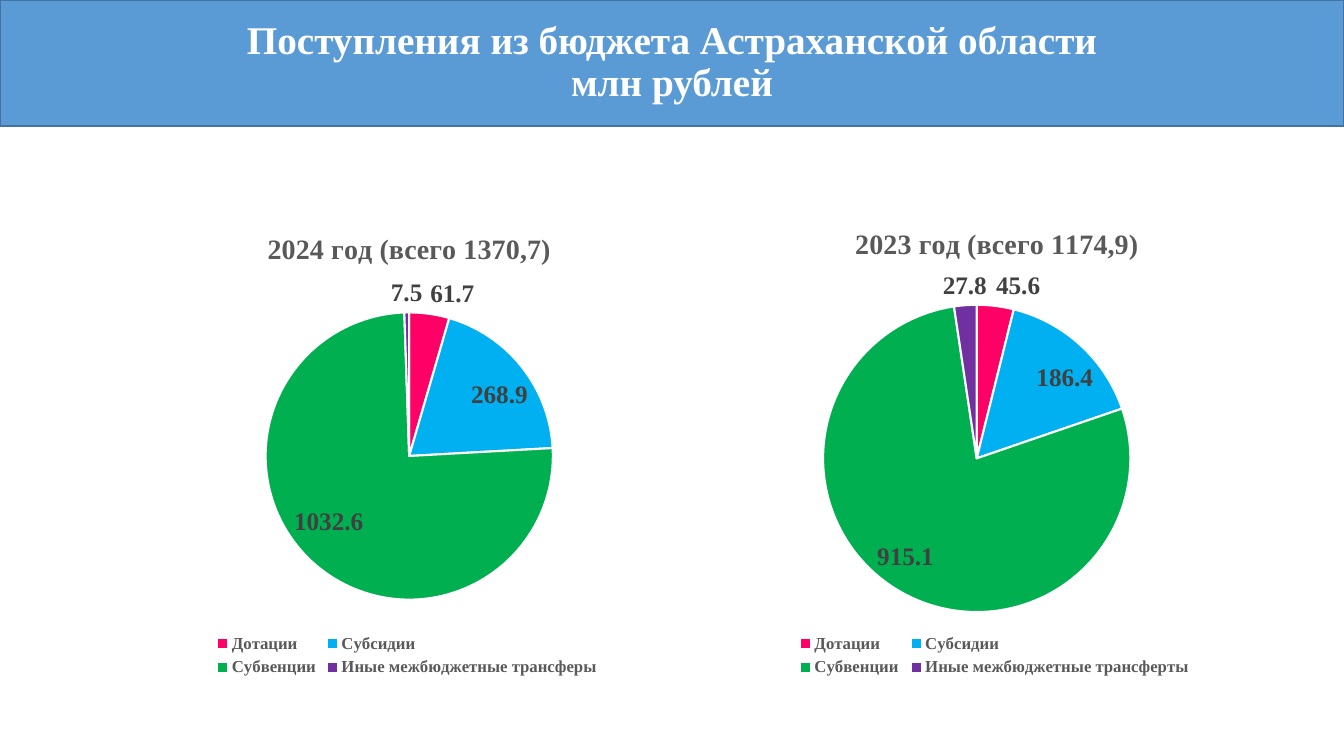
from lxml import etree
from pptx import Presentation
from pptx.chart.data import CategoryChartData
from pptx.dml.color import RGBColor
from pptx.enum.chart import XL_CHART_TYPE, XL_LABEL_POSITION, XL_LEGEND_POSITION
from pptx.enum.text import MSO_ANCHOR, PP_ALIGN
from pptx.oxml.ns import qn
from pptx.util import Pt

PIE = XL_CHART_TYPE.PIE
BEST_FIT = XL_LABEL_POSITION.BEST_FIT
LEGEND_BOTTOM = XL_LEGEND_POSITION.BOTTOM
CENTER = PP_ALIGN.CENTER
MIDDLE = MSO_ANCHOR.MIDDLE

WHITE = RGBColor(0xFF, 0xFF, 0xFF)
BLUE = RGBColor(0x5B, 0x9B, 0xD5)
DARK_BLUE = RGBColor(0x43, 0x73, 0x9E)
GRAY = RGBColor(0x59, 0x59, 0x59)
DARK_GRAY = RGBColor(0x40, 0x40, 0x40)
PINK = RGBColor(0xFF, 0x00, 0x66)
SKY = RGBColor(0x00, 0xB0, 0xF0)
GREEN = RGBColor(0x00, 0xB0, 0x50)
PURPLE = RGBColor(0x70, 0x30, 0xA0)
SLICE_COLORS = (PINK, SKY, GREEN, PURPLE)

SLIDE_WIDTH, SLIDE_HEIGHT = 960, 540
CATEGORIES = ("Дотации", "Субсидии", "Субвенции")


def set_attributes(target, values):
    for name, value in values.items():
        setattr(target, name, value)


class BudgetSlide:
    font_name = "Times New Roman"

    def __init__(self, presentation):
        self.slide = presentation.slides.add_slide(presentation.slide_layouts[5])

    def style_font(self, font, size, color):
        set_attributes(font, {"name": self.font_name, "size": Pt(size), "bold": True})
        font.color.rgb = color

    def add_title(self, lines, height):
        title = self.slide.shapes.title
        set_attributes(title, {"left": 0, "top": 0, "width": Pt(SLIDE_WIDTH), "height": Pt(height)})
        title.fill.solid()
        title.fill.fore_color.rgb = BLUE
        title.line.color.rgb = DARK_BLUE
        title.line.width = Pt(1)
        frame = title.text_frame
        set_attributes(frame, {"text": "\n".join(lines), "vertical_anchor": MIDDLE, "word_wrap": True})
        for paragraph in frame.paragraphs:
            set_attributes(paragraph, {"alignment": CENTER, "line_spacing": 0.9,
                                       "space_before": Pt(0), "space_after": Pt(0)})
            for run in paragraph.runs:
                self.style_font(run.font, 28, WHITE)

    def place(self, element, index, values):
        for old_layout in element.findall(qn("c:layout")):
            element.remove(old_layout)
        layout = etree.Element(qn("c:layout"))
        manual = etree.SubElement(layout, qn("c:manualLayout"))
        for name, value in values.items():
            etree.SubElement(manual, qn(f"c:{name}")).set("val", str(value))
        element.insert(index, layout)

    def place_box(self, element, index, box, target=None):
        values = {"layoutTarget": target} if target else {}
        values.update(xMode="edge", yMode="edge")
        values.update(zip("xywh", box))
        self.place(element, index, values)

    def add_pie(self, box, title, categories, amounts, title_box, pie_box, legend_box):
        data = CategoryChartData()
        data.categories = categories
        data.add_series(title, amounts)
        chart = self.slide.shapes.add_chart(PIE, *map(Pt, box), data).chart
        set_attributes(chart, {"has_title": True, "has_legend": True})
        set_attributes(chart.font, {"name": "Calibri", "size": Pt(10)})

        frame = chart.chart_title.text_frame
        frame.text = title
        self.style_font(frame.paragraphs[0].runs[0].font, 20, GRAY)

        legend = chart.legend
        set_attributes(legend, {"position": LEGEND_BOTTOM, "include_in_layout": False})
        self.style_font(legend.font, 12, GRAY)

        plot = chart.plots[0]
        plot.vary_by_categories = True
        series = plot.series[0]
        for index, color in enumerate(SLICE_COLORS):
            slice_format = series.points[index].format
            slice_format.fill.solid()
            slice_format.fill.fore_color.rgb = color
            slice_format.line.color.rgb = WHITE
            slice_format.line.width = Pt(1.5)
        labels = series.data_labels
        set_attributes(labels, {"show_value": True, "position": BEST_FIT})
        self.style_font(labels.font, 18, DARK_GRAY)

        chart_element = chart.element.find(qn("c:chart"))
        self.place_box(chart_element.find(qn("c:title")), 1, title_box)
        self.place_box(chart_element.find(qn("c:plotArea")), 0, pie_box, "inner")
        self.place_box(chart_element.find(qn("c:legend")), 1, legend_box)


def main():
    presentation = Presentation()
    set_attributes(presentation, {"slide_width": Pt(SLIDE_WIDTH), "slide_height": Pt(SLIDE_HEIGHT)})
    budget = BudgetSlide(presentation)
    budget.add_title(("Поступления из бюджета Астраханской области", "млн рублей"), 90)
    budget.add_pie((66, 144, 450, 343), "2024 год (всего 1370,7)",
                   CATEGORIES + ("Иные межбюджетные трансферы",), (61.7, 268.9, 1032.6, 7.5),
                   (0.27, 0.05), (0.275, 0.23, 0.456, 0.6), (0.19, 0.89, 0.62, 0.11))
    budget.add_pie((486, 144, 449, 343), "2023 год (всего 1174,9)",
                   CATEGORIES + ("Иные межбюджетные трансферты",), (45.6, 186.4, 915.1, 27.8),
                   (0.27, 0.04), (0.227, 0.215, 0.489, 0.64), (0.18, 0.89, 0.64, 0.11))
    presentation.save("out.pptx")


if __name__ == "__main__":
    main()
